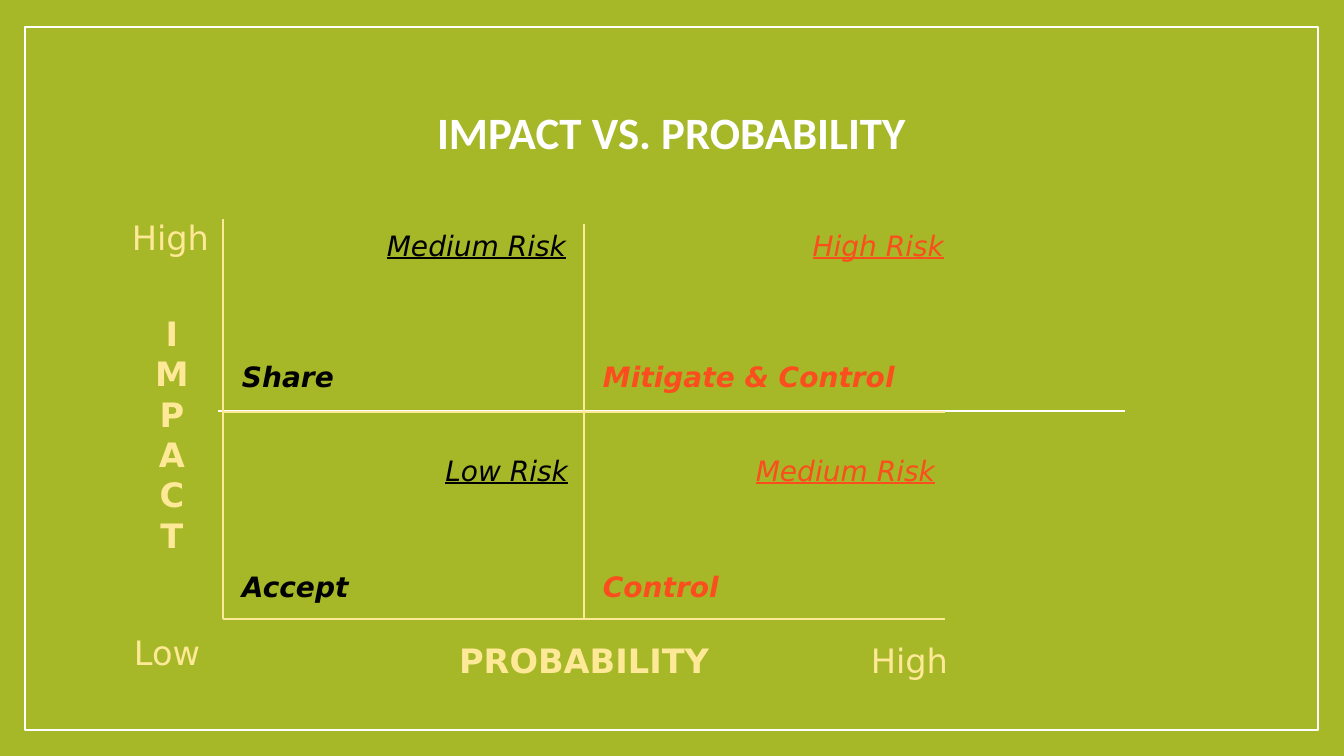
from lxml.etree import SubElement
from pptx import Presentation
from pptx.dml.color import RGBColor
from pptx.enum.shapes import MSO_CONNECTOR, MSO_SHAPE
from pptx.enum.text import MSO_ANCHOR, MSO_AUTO_SIZE, PP_ALIGN
from pptx.oxml.ns import qn
from pptx.util import Pt

PX = 914400 / 100.8
COLORS = {"olive": "A6B727", "white": "FFFFFF", "cream": "FDE997",
          "orange": "FB4D1D", "black": "000000"}
AXIS = {"size": Pt(24)}
RISK = {"size": Pt(20), "italic": True, "underline": True}
RESPONSE = {"size": Pt(20), "italic": True, "bold": True}


def px(value):
    return round(value * PX)


def rgb(name):
    return RGBColor.from_string(COLORS[name])


def add_line(slide, start, end, color, width=1):
    line = slide.shapes.add_connector(
        MSO_CONNECTOR.STRAIGHT, *map(px, (*start, *end)))
    line.line.color.rgb = rgb(color)
    line.line.width = Pt(width)
    SubElement(line._element.spPr, qn("a:effectLst"))


def add_label(slide, box, lines, color, font, align=PP_ALIGN.LEFT,
              face="DejaVu Sans", spacing=None, frame=None):
    label = slide.shapes.add_textbox(*map(px, box)).text_frame
    frame_format = {"word_wrap": True, "auto_size": MSO_AUTO_SIZE.SHAPE_TO_FIT_TEXT}
    for name, value in (frame_format | (frame or {})).items():
        setattr(label, name, value)
    for index, line in enumerate(lines):
        paragraph = label.paragraphs[0] if index == 0 else label.add_paragraph()
        paragraph.alignment = align
        if spacing:
            paragraph.line_spacing = spacing
        run = paragraph.add_run()
        run.text = line
        run.font.color.rgb = rgb(color)
        for name, value in ({"name": face} | font).items():
            setattr(run.font, name, value)


def add_backdrop(slide, box):
    left, top, width, height = box
    slide.background.fill.solid()
    slide.background.fill.fore_color.rgb = rgb("olive")
    border = slide.shapes.add_shape(MSO_SHAPE.RECTANGLE, *map(px, box))
    border.shadow.inherit = False
    border.fill.solid()
    border.fill.fore_color.rgb = rgb("olive")
    border.line.color.rgb = rgb("white")
    border.line.width = Pt(1)
    # Thin rule across the frame
    rule_y = top + 384
    add_line(slide, (left + 193, rule_y), (left + width - 193, rule_y), "white", 0.79)


def add_title(slide, box):
    add_label(slide, box, ["IMPACT VS. PROBABILITY"], "white",
              {"size": Pt(32), "bold": True}, PP_ALIGN.CENTER, face="Calibri",
              spacing=0.85, frame={"auto_size": MSO_AUTO_SIZE.NONE,
                                   "vertical_anchor": MSO_ANCHOR.BOTTOM})


def add_quadrants(slide, box):
    left, top, width, height = box
    right, bottom = left + width, top + height
    middle_x, middle_y = left + width // 2, top + 193

    # Axes and dividers
    for start, end in (((left, top), (left, bottom)),
                       ((left, bottom), (right, bottom)),
                       ((middle_x, top + 5), (middle_x, bottom)),
                       ((left, middle_y), (right, middle_y))):
        add_line(slide, start, end, "cream")

    # Risk level at the upper right, response at the lower left
    risk_tops = (top + 5, top + 230)
    response_tops = (top + 136, top + 346)
    quadrants = (
        (0, 0, "Medium Risk", middle_x - 8, "Share", "black"),
        (1, 0, "High Risk", right + 9, "Mitigate & Control", "orange"),
        (0, 1, "Low Risk", middle_x - 6, "Accept", "black"),
        (1, 1, "Medium Risk", right, "Control", "orange"))
    for column, row, risk, risk_right, response, color in quadrants:
        add_label(slide, (risk_right - 240, risk_tops[row], 240, 43),
                  [risk], color, RISK, PP_ALIGN.RIGHT)
        add_label(slide, ((left, middle_x)[column] + 9, response_tops[row], 345, 43),
                  [response], color, RESPONSE)


def add_axis_labels(slide, box):
    left, top, width, height = box
    bottom = top + height
    bold = AXIS | {"bold": True}
    # Impact, top to bottom
    add_label(slide, (left - 101, top - 7, 110, 50), ["High"], "cream", AXIS)
    add_label(slide, (left - 91, top + 89, 80, 254), list("IMPACT"), "cream", bold,
              PP_ALIGN.CENTER)
    add_label(slide, (left - 99, bottom + 8, 132, 50), ["Low"], "cream", AXIS)
    # Probability, left to right
    add_label(slide, (left + width // 2 - 168, bottom + 16, 336, 50),
              ["PROBABILITY"], "cream", bold, PP_ALIGN.CENTER)
    add_label(slide, (left + width - 84, bottom + 16, 110, 50), ["High"], "cream", AXIS)


def main():
    deck = Presentation()
    deck.slide_width, deck.slide_height = px(1344), px(756)
    slide = deck.slides.add_slide(deck.slide_layouts[6])
    matrix = (223, 219, 722, 400)
    add_backdrop(slide, (25, 27, 1293, 703))
    add_title(slide, (122, 97, 1099, 67))
    add_quadrants(slide, matrix)
    add_axis_labels(slide, matrix)
    deck.save("out.pptx")


if __name__ == "__main__":
    main()
